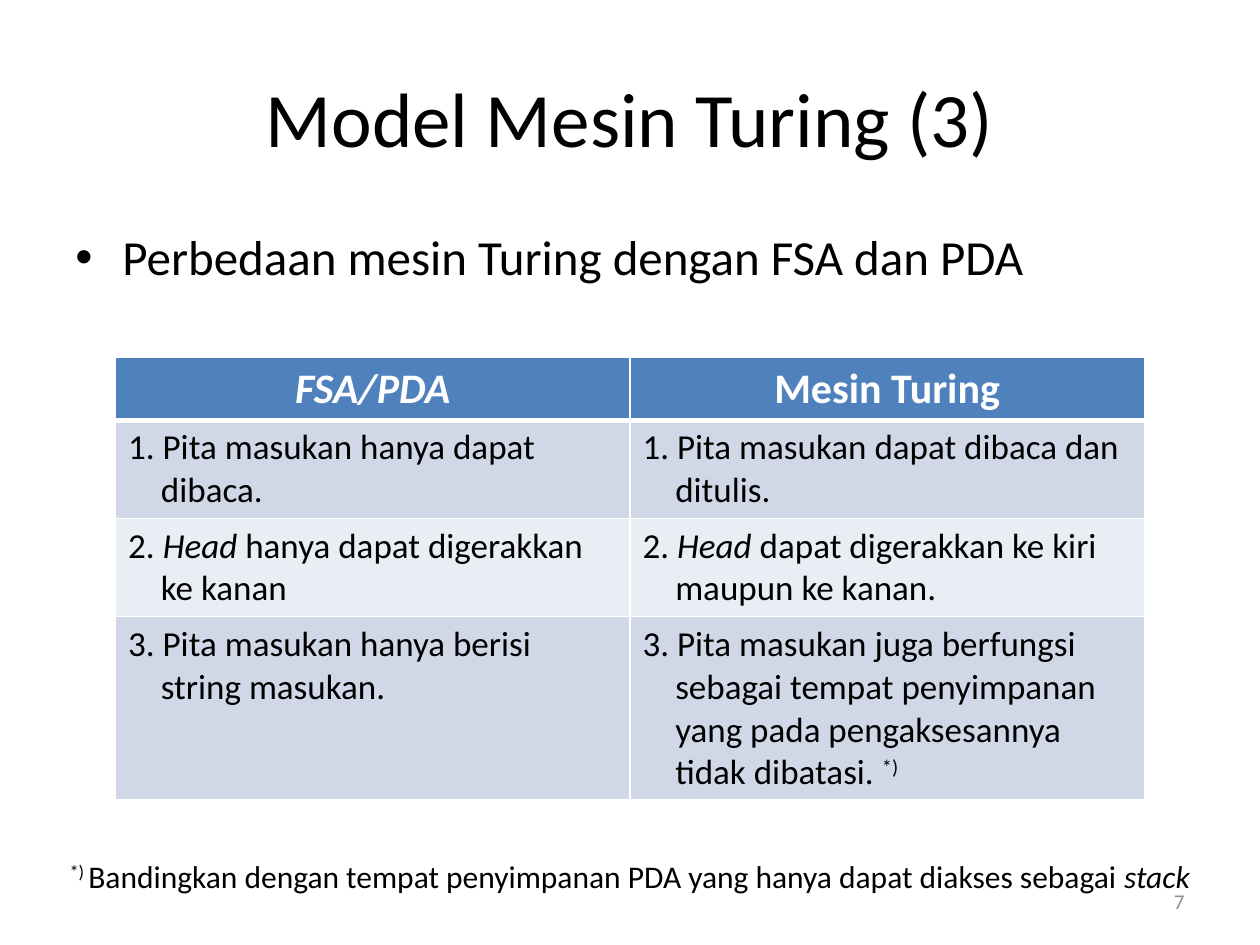
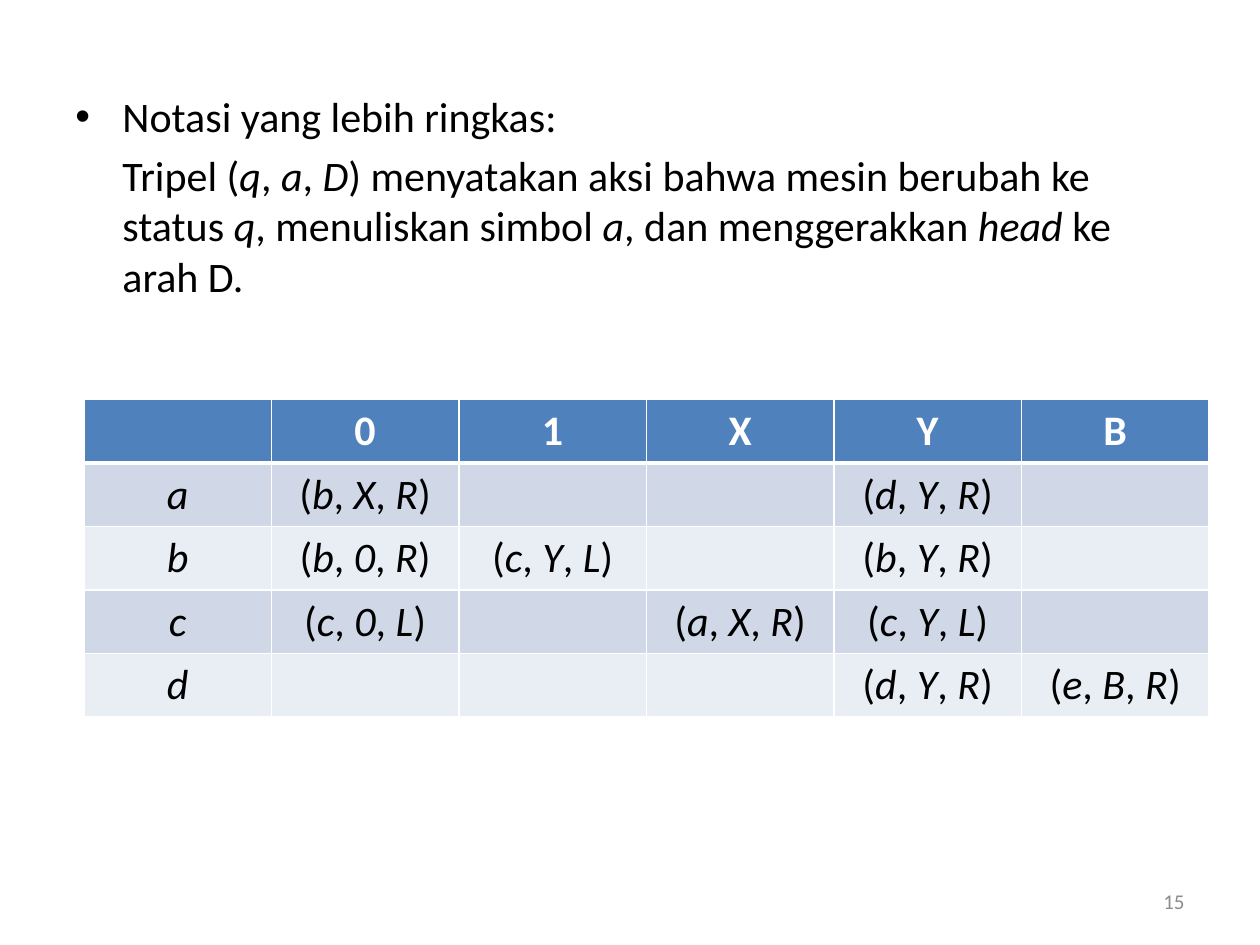
from lxml import etree
from pptx import Presentation
from pptx import util as u
from pptx.dml.color import RGBColor
from pptx.enum import text
from pptx.oxml import ns

BLACK = RGBColor(0x00, 0x00, 0x00)
WHITE = RGBColor(0xFF, 0xFF, 0xFF)
GREY = RGBColor(0x8C, 0x8C, 0x8C)
HEADER_BLUE = RGBColor(0x4F, 0x81, 0xBD)
BANDS = [RGBColor(0xE9, 0xED, 0xF4), RGBColor(0xD0, 0xD8, 0xE8)]
FONT = "Calibri"
LEFT, CENTER, RIGHT = text.PP_ALIGN.LEFT, text.PP_ALIGN.CENTER, text.PP_ALIGN.RIGHT
TOP, MIDDLE = text.MSO_ANCHOR.TOP, text.MSO_ANCHOR.MIDDLE
BODY_INDENT = 0.95
CELL_INDENT = 0.66


def write(paragraph, markup, size, color, align=LEFT, bold=False, margin=0, hanging=False):
    """Underscores enclose italics and carets enclose superscripts."""
    paragraph.alignment = align
    properties = paragraph._p.get_or_add_pPr()
    properties.set("marL", str(u.Cm(margin)))
    properties.set("indent", str(-u.Cm(margin) if hanging else 0))
    for raised, part in enumerate(markup.split("^")):
        for slanted, words in enumerate(part.split("_")):
            if words:
                run = paragraph.add_run()
                run.text = words
                run.font.name = FONT
                run.font.size = u.Pt(size)
                run.font.color.rgb = color
                run.font.bold = bold
                run.font.italic = slanted % 2 == 1
                if raised % 2:
                    run._r.get_or_add_rPr().set("baseline", "30000")


def add_grid(slide, left, top, column_width, row_heights, rows, size, align, margin):
    count = len(rows[0])
    table = slide.shapes.add_table(
        len(rows), count, u.Cm(left), u.Cm(top),
        u.Cm(column_width * count), u.Cm(sum(row_heights))).table
    for column in table.columns:
        column.width = u.Cm(column_width)
    for index, (height, markups) in enumerate(zip(row_heights, rows)):
        table.rows[index].height = u.Cm(height)
        header = index == 0
        widths = {"lnL": 1, "lnR": 1, "lnT": 3 if index == 1 else 1, "lnB": 3 if header else 1}
        for cell, markup in zip(table.rows[index].cells, markups):
            properties = cell._tc.get_or_add_tcPr()
            for side, width in widths.items():
                line = etree.SubElement(properties, ns.qn("a:" + side), w=str(u.Pt(width)))
                fill = etree.SubElement(line, ns.qn("a:solidFill"))
                etree.SubElement(fill, ns.qn("a:srgbClr"), val=str(WHITE))
            cell.fill.solid()
            cell.fill.fore_color.rgb = HEADER_BLUE if header else BANDS[index % 2]
            paragraph = cell.text_frame.paragraphs[0]
            if header:
                write(paragraph, markup, 24, WHITE, CENTER, True)
            else:
                write(paragraph, markup, size, BLACK, align, False, margin, True)


presentation = Presentation()
presentation.slide_width = u.Cm(25.4)
presentation.slide_height = u.Cm(19.05)
blank = presentation.slide_layouts[6]
comparison = presentation.slides.add_slide(blank)
notation = presentation.slides.add_slide(blank)

bodies = [
    (comparison, 4.45, 12.57, 28, ["Perbedaan mesin Turing dengan FSA dan PDA"]),
    (notation, 1.7, 15.32, 24, [
        "Notasi yang lebih ringkas:",
        "Tripel (_q_, _a_, _D_) menyatakan aksi bahwa mesin berubah ke status _q_, "
        "menuliskan simbol _a_, dan menggerakkan _head_ ke arah D."]),
]
for slide, top, height, size, markups in bodies:
    frame = slide.shapes.add_textbox(u.Cm(1.27), u.Cm(top), u.Cm(22.86), u.Cm(height)).text_frame
    frame.word_wrap = True
    for index, markup in enumerate(markups):
        bulleted = index == 0
        paragraph = frame.paragraphs[0] if bulleted else frame.add_paragraph()
        write(paragraph, markup, size, BLACK, margin=BODY_INDENT, hanging=bulleted)
        paragraph.space_before = u.Pt(size * 0.2)
        if bulleted:
            properties = paragraph._p.get_or_add_pPr()
            etree.SubElement(properties, ns.qn("a:buFont"), typeface="Arial")
            etree.SubElement(properties, ns.qn("a:buChar"), char="•")

labels = [
    (comparison, 1.27, 0.76, 22.86, 3.18, "Model Mesin Turing (3)", 44, BLACK, CENTER, MIDDLE, True),
    (comparison, 18.2, 17.66, 5.93, 1.01, "7", 12, GREY, RIGHT, MIDDLE, True),
    (notation, 18.2, 17.66, 5.93, 1.01, "15", 12, GREY, RIGHT, MIDDLE, True),
    (comparison, 1.07, 17.15, 23.77, 1.03,
     "^ *) ^Bandingkan dengan tempat penyimpanan PDA yang hanya dapat diakses sebagai _stack_",
     18, BLACK, LEFT, TOP, False),
]
for slide, left, top, width, height, markup, size, color, align, anchor, wrap in labels:
    frame = slide.shapes.add_textbox(u.Cm(left), u.Cm(top), u.Cm(width), u.Cm(height)).text_frame
    frame.word_wrap = wrap
    frame.vertical_anchor = anchor
    write(frame.paragraphs[0], markup, size, color, align)

differences = [
    ["_FSA/PDA_", "Mesin Turing"],
    ["1. Pita masukan hanya dapat dibaca.", "1. Pita masukan dapat dibaca dan ditulis."],
    ["2. _Head_ hanya dapat digerakkan ke kanan",
     "2. _Head_ dapat digerakkan ke kiri maupun ke kanan."],
    ["3. Pita masukan hanya berisi string masukan.",
     "3. Pita masukan juga berfungsi sebagai tempat penyimpanan "
     "yang pada pengaksesannya tidak dibatasi. ^*)^"],
]
add_grid(comparison, 2.33, 7.2, 10.37, [1.27, 1.98, 1.98, 3.7], differences, 20, LEFT, CELL_INDENT)

symbols = ["0", "1", "X", "Y", "B"]
actions = {
    "a": {"0": "bXR", "Y": "dYR"},
    "b": {"0": "b0R", "1": "cYL", "Y": "bYR"},
    "c": {"0": "c0L", "X": "aXR", "Y": "cYL"},
    "d": {"Y": "dYR", "B": "eBR"},
}
transitions = [[""] + symbols]
for state, moves in actions.items():
    row = [f"_{state}_"]
    for symbol in symbols:
        triple = ", ".join(f"_{letter}_" for letter in moves.get(symbol, ""))
        row.append(f"({triple})" if triple else "")
    transitions.append(row)
add_grid(notation, 1.69, 8.05, 3.78, [1.28] * 5, transitions, 24, CENTER, 0)

presentation.save("out.pptx")
